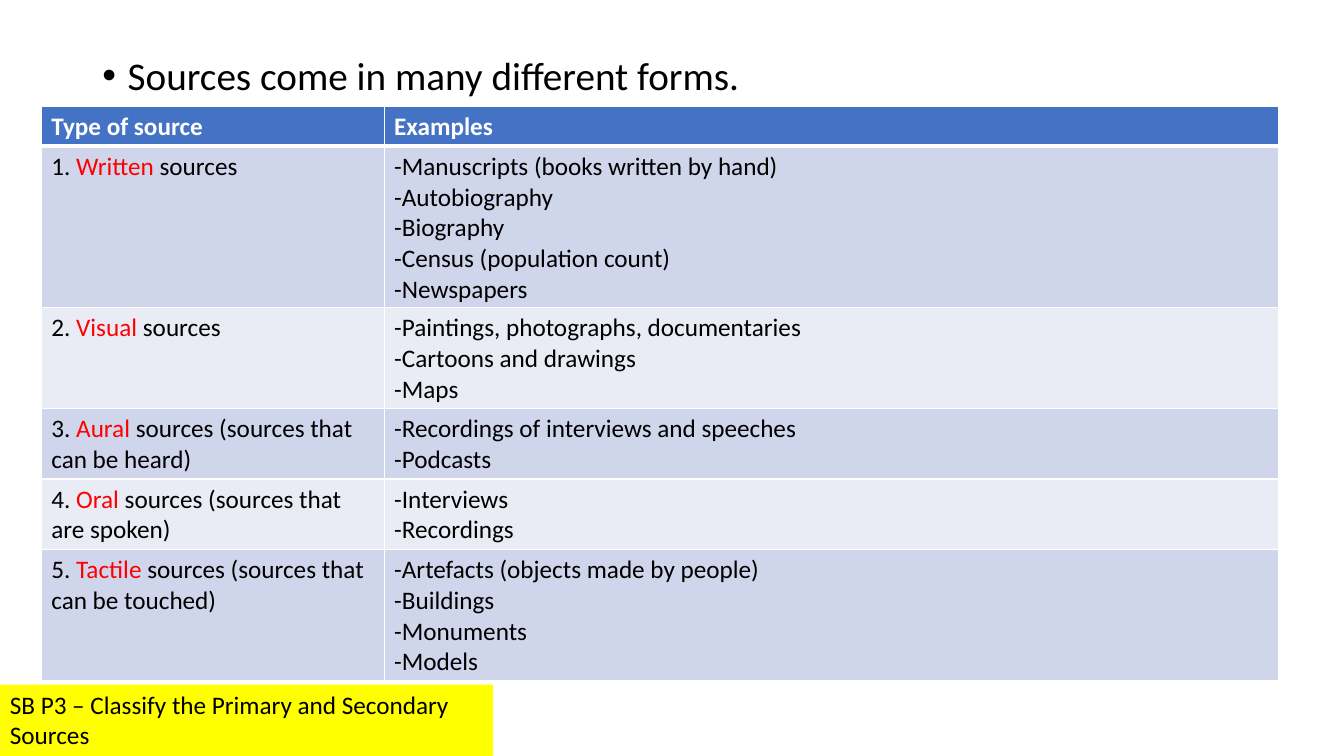
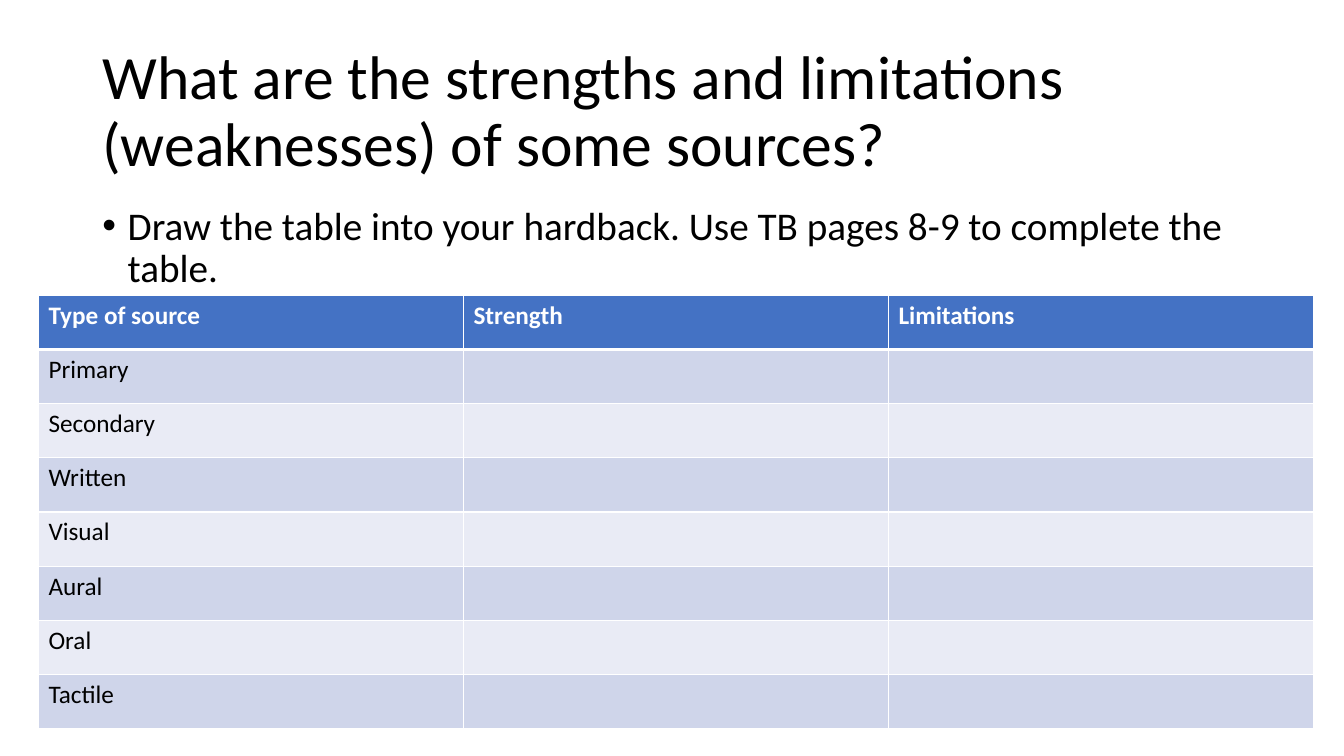
from dataclasses import dataclass

from lxml import etree
from pptx import Presentation
from pptx.dml.color import RGBColor
from pptx.enum import text
from pptx.oxml import ns
from pptx.util import Cm, Length, Pt

# Shared look
FONT = "Calibri"
BLACK = RGBColor(0x00, 0x00, 0x00)
WHITE = RGBColor(0xFF, 0xFF, 0xFF)
RED = RGBColor(0xFF, 0x00, 0x00)
YELLOW = RGBColor(0xFF, 0xFF, 0x00)
HEADER_BLUE = RGBColor(0x44, 0x72, 0xC4)
BANDS = (RGBColor(0xCF, 0xD5, 0xEA), RGBColor(0xE9, 0xEB, 0xF5))

TITLE_SIZE, BODY_SIZE, SMALL_SIZE = Pt(44), Pt(28), Pt(18)
CONTENT_LEFT, CONTENT_WIDTH = Cm(2.33), Cm(29.21)
BULLET_INDENT = Cm(0.64)
CELL_PADDING, CELL_LINE = Cm(0.25), Cm(0.76)


@dataclass(frozen=True)
class Area:
    left: Length
    top: Length
    width: Length
    height: Length


@dataclass(frozen=True)
class Span:
    text: str
    color: RGBColor | None = None


@dataclass(frozen=True)
class SourceType:
    keyword: str
    ending: str
    examples: tuple[str, ...]


Cell = list[list[Span]]

SOURCE_TYPES = (
    SourceType("Written", " sources", (
        "-Manuscripts (books written by hand)", "-Autobiography", "-Biography",
        "-Census (population count)", "-Newspapers")),
    SourceType("Visual", " sources", (
        "-Paintings, photographs, documentaries", "-Cartoons and drawings", "-Maps")),
    SourceType("Aural", " sources (sources that can be heard)", (
        "-Recordings of interviews and speeches", "-Podcasts")),
    SourceType("Oral", " sources (sources that are spoken)", (
        "-Interviews", "-Recordings")),
    SourceType("Tactile", " sources (sources that can be touched)", (
        "-Artefacts (objects made by people)", "-Buildings", "-Monuments", "-Models")),
)


# Text
def set_font(para, size: Length, color: RGBColor = BLACK, bold: bool = False) -> None:
    font = para.font
    font.name, font.size, font.bold = FONT, size, bold
    font.color.rgb = color


def add_bullet(para) -> None:
    properties = para._p.get_or_add_pPr()
    properties.set("marL", str(BULLET_INDENT))
    properties.set("indent", str(-BULLET_INDENT))
    etree.SubElement(properties, ns.qn("a:buFont"), typeface="Arial")
    etree.SubElement(properties, ns.qn("a:buChar"), char="•")


def add_text(page, area: Area, wording: str, size: Length, bullet: bool = False,
             spacing: float = 0.9, anchor=text.MSO_ANCHOR.TOP):
    box = page.shapes.add_textbox(area.left, area.top, area.width, area.height)
    frame = box.text_frame
    frame.word_wrap = True
    frame.vertical_anchor = anchor
    para = frame.paragraphs[0]
    para.text = wording
    if bullet:
        add_bullet(para)
    para.line_spacing = spacing
    set_font(para, size)
    return box


# Tables
def plain(*lines: str) -> Cell:
    return [[Span(line)] for line in lines]


def set_borders(cell, bottom: Length) -> None:
    properties = cell._tc.get_or_add_tcPr()
    widths = {"lnL": Pt(1), "lnR": Pt(1), "lnT": Pt(1), "lnB": bottom}
    for position, (side, width) in enumerate(widths.items()):
        line = etree.Element(ns.qn(f"a:{side}"), w=str(width))
        fill = etree.SubElement(line, ns.qn("a:solidFill"))
        etree.SubElement(fill, ns.qn("a:srgbClr"), val=str(WHITE))
        properties.insert(position, line)


def fill_cell(cell, content: Cell, header: bool, fill: RGBColor) -> None:
    cell.fill.solid()
    cell.fill.fore_color.rgb = fill
    set_borders(cell, Pt(3) if header else Pt(1))
    frame = cell.text_frame
    for index, spans in enumerate(content):
        para = frame.add_paragraph() if index else frame.paragraphs[0]
        set_font(para, SMALL_SIZE, WHITE if header else BLACK, header)
        for span in spans:
            run = para.add_run()
            run.text = span.text
            if span.color is not None:
                run.font.color.rgb = span.color


def add_banded_table(page, left: Length, top: Length, widths: list[Length],
                     heights: list[Length], rows: list[list[Cell]]) -> None:
    table = page.shapes.add_table(len(rows), len(widths), left, top,
                                  sum(widths), sum(heights)).table
    for column, width in zip(table.columns, widths):
        column.width = width
    for index, (row, height, contents) in enumerate(zip(table.rows, heights, rows)):
        row.height = height
        header = index == 0
        fill = HEADER_BLUE if header else BANDS[(index - 1) % len(BANDS)]
        for cell, content in zip(row.cells, contents):
            fill_cell(cell, content, header, fill)


# Slides
def add_forms_page(deck) -> None:
    page = deck.slides.add_slide(deck.slide_layouts[6])
    add_text(page, Area(CONTENT_LEFT, Cm(1.3), CONTENT_WIDTH, Cm(16.17)),
             "Sources come in many different forms.", BODY_SIZE, bullet=True)

    # Yellow task label
    label = add_text(page, Area(Cm(0), Cm(17.25), Cm(12.42), Cm(1.8)),
                     "SB P3 – Classify the Primary and Secondary Sources",
                     SMALL_SIZE, spacing=1.0)
    label.fill.solid()
    label.fill.fore_color.rgb = YELLOW

    # Source types with examples
    rows = [[plain("Type of source"), plain("Examples")]]
    for number, source in enumerate(SOURCE_TYPES, start=1):
        name = [Span(f"{number}. "), Span(source.keyword, RED), Span(source.ending)]
        rows.append([[name], plain(*source.examples)])
    heights = [CELL_PADDING + CELL_LINE * len(examples) for _, examples in rows]
    add_banded_table(page, Cm(1.04), Cm(2.67), [Cm(8.64), Cm(22.55)], heights, rows)


def add_strengths_page(deck) -> None:
    page = deck.slides.add_slide(deck.slide_layouts[6])
    add_text(page, Area(CONTENT_LEFT, Cm(1.01), CONTENT_WIDTH, Cm(3.68)),
             "What are the strengths and limitations (weaknesses) of some sources?",
             TITLE_SIZE, anchor=text.MSO_ANCHOR.MIDDLE)
    add_text(page, Area(CONTENT_LEFT, Cm(5.07), CONTENT_WIDTH, Cm(12.09)),
             "Draw the table into your hardback. Use TB pages 8-9 to complete the table.",
             BODY_SIZE, bullet=True)

    # Table to complete
    names = ["Primary", "Secondary"] + [source.keyword for source in SOURCE_TYPES]
    rows = [[plain("Type of source"), plain("Strength"), plain("Limitations")]]
    rows += [[plain(name), [], []] for name in names]
    add_banded_table(page, Cm(0.97), Cm(7.44), [Cm(10.71)] * 3,
                     [Cm(10.92) // len(rows)] * len(rows), rows)


def main() -> None:
    deck = Presentation()
    deck.slide_width, deck.slide_height = Cm(33.87), Cm(19.05)
    add_forms_page(deck)
    add_strengths_page(deck)
    deck.save("out.pptx")


if __name__ == "__main__":
    main()
